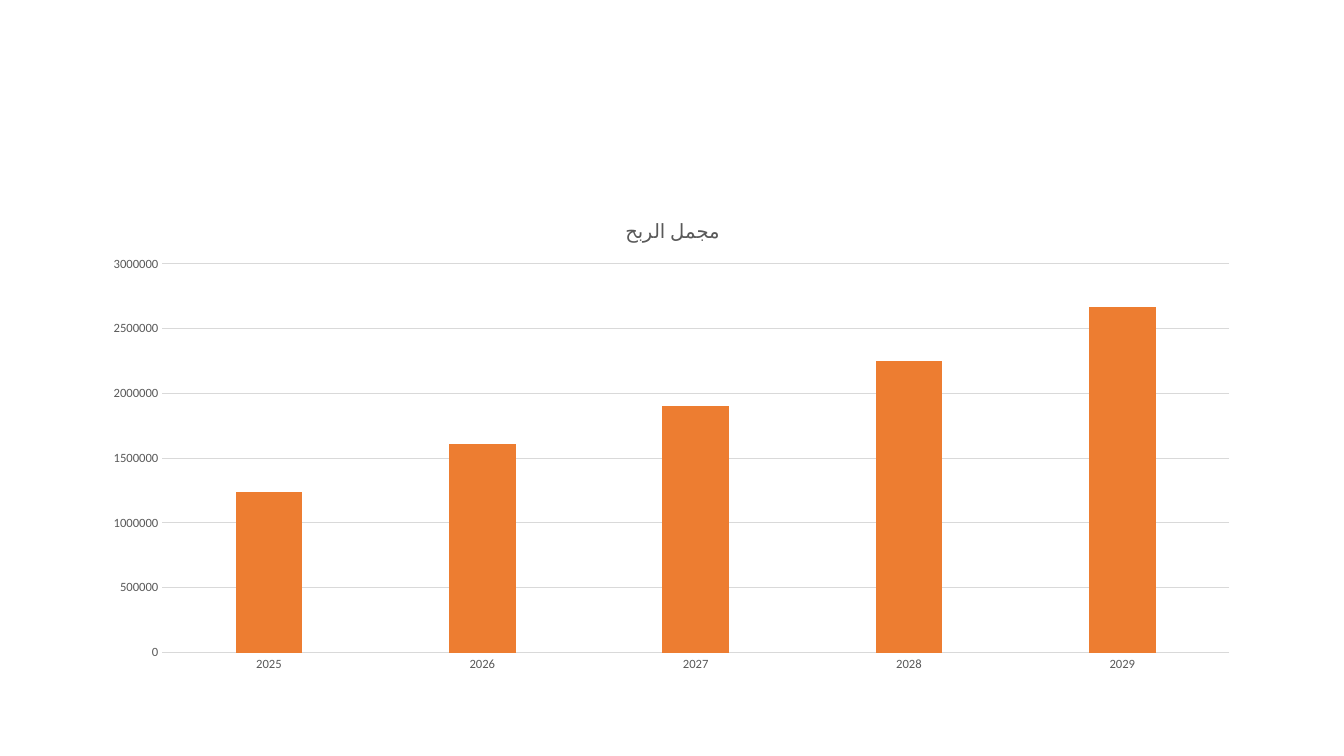
from dataclasses import dataclass

from lxml.etree import SubElement
from pptx import Presentation
from pptx.chart.data import CategoryChartData
from pptx.dml.color import RGBColor
from pptx.enum.chart import XL_CHART_TYPE as ChartType, XL_TICK_MARK as TickMark
from pptx.oxml.ns import qn
from pptx.util import Inches, Pt


@dataclass(frozen=True)
class Theme:
    font: str = "Calibri"
    text: RGBColor = RGBColor(0x59, 0x59, 0x59)
    rule: RGBColor = RGBColor(0xD9, 0xD9, 0xD9)
    bar: RGBColor = RGBColor(0xED, 0x7D, 0x31)
    title_size: Pt = Pt(14)
    label_size: Pt = Pt(9)
    rule_width: Pt = Pt(0.75)


THEME = Theme()
GROSS_PROFIT = {
    "2025": 1240000,
    "2026": 1610000,
    "2027": 1900000,
    "2028": 2250000,
    "2029": 2670000,
}


def style_font(font, size):
    font.name = THEME.font
    font.size = size
    font.bold = False
    font.color.rgb = THEME.text


def style_rule(line):
    line.color.rgb = THEME.rule
    line.width = THEME.rule_width


def place_plot(chart, x, y, w, h):
    area = chart._chartSpace.chart.plotArea
    for old in area.findall(qn("c:layout")):
        area.remove(old)
    layout = SubElement(area, qn("c:layout"))
    area.insert(0, layout)
    manual = SubElement(layout, qn("c:manualLayout"))
    settings = {"layoutTarget": "inner", "xMode": "edge", "yMode": "edge",
                "x": x, "y": y, "w": w, "h": h}
    for name, value in settings.items():
        SubElement(manual, qn(f"c:{name}")).set("val", str(value))


def add_profit_chart(s, left, top, width, height):
    data = CategoryChartData(number_format="0")
    data.categories = list(GROSS_PROFIT)
    data.add_series("Series 1", list(GROSS_PROFIT.values()))
    frame = s.shapes.add_chart(ChartType.COLUMN_CLUSTERED, left, top, width, height, data)
    chart = frame.chart
    style_font(chart.font, THEME.label_size)
    chart.has_legend = False

    chart.has_title = True
    chart.chart_title.include_in_layout = False
    p = chart.chart_title.text_frame.paragraphs[0]
    r = p.add_run()
    r.text = "مجمل الربح"
    style_font(r.font, THEME.title_size)

    for axis in (chart.category_axis, chart.value_axis):
        axis.major_tick_mark = TickMark.NONE
        axis.minor_tick_mark = TickMark.NONE
        style_font(axis.tick_labels.font, THEME.label_size)
    style_rule(chart.category_axis.format.line)

    values = chart.value_axis
    values.minimum_scale = 0
    values.maximum_scale = 3000000
    values.major_unit = 500000
    values.tick_labels.number_format = "0"
    values.tick_labels.number_format_is_linked = False
    values.format.line.fill.background()
    style_rule(values.major_gridlines.format.line)

    plot = chart.plots[0]
    plot.vary_by_categories = False
    plot.gap_width = 219
    plot.overlap = -27
    fill = plot.series[0].format.fill
    fill.solid()
    fill.fore_color.rgb = THEME.bar
    place_plot(chart, 0.06, 0.13, 0.92, 0.81)


def main():
    prs = Presentation()
    prs.slide_width = Inches(13.33)
    prs.slide_height = Inches(7.5)
    s = prs.slides.add_slide(prs.slide_layouts[6])
    add_profit_chart(s, Inches(0.92), Inches(2), Inches(11.5), Inches(4.76))
    prs.save("out.pptx")


if __name__ == "__main__":
    main()
